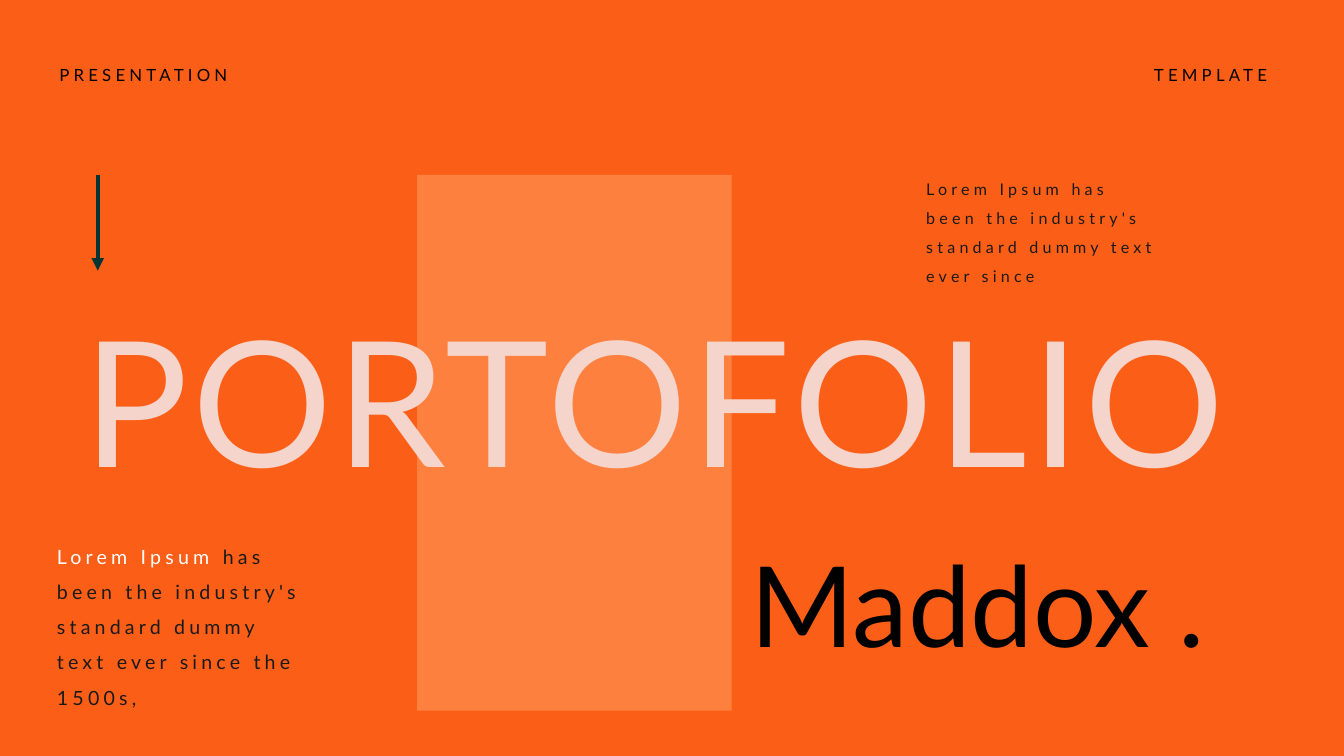
from lxml import etree
from pptx import Presentation
from pptx.dml.color import RGBColor
from pptx.enum.shapes import MSO_CONNECTOR, MSO_SHAPE
from pptx.enum.text import MSO_ANCHOR, MSO_AUTO_SIZE
from pptx.oxml.ns import qn
from pptx.util import Inches, Pt

ORANGE = RGBColor(0xFB, 0x5F, 0x17)
LIGHT_ORANGE = RGBColor(0xFE, 0x80, 0x3E)
BLUSH = RGBColor(0xF5, 0xD4, 0xCB)
TEAL = RGBColor(0x01, 0x34, 0x32)
BLACK = RGBColor(0, 0, 0)
INK = RGBColor(0x1A, 0x1A, 0x1A)
WHITE = RGBColor(0xFF, 0xFF, 0xFF)

FONT = "Lato"
STRAIGHT = MSO_CONNECTOR.STRAIGHT
RECTANGLE = MSO_SHAPE.RECTANGLE
TOP, MIDDLE = MSO_ANCHOR.TOP, MSO_ANCHOR.MIDDLE
GROW = MSO_AUTO_SIZE.SHAPE_TO_FIT_TEXT


def add_text(slide, box, text, *, size, color=BLACK, lead="", lead_color=WHITE,
             spacing=6, line_spacing=None, anchor=TOP, inset=0.1):
    """Add a text box, with an optional lead-in in its own colour."""
    tf = slide.shapes.add_textbox(*map(Inches, box)).text_frame
    tf.word_wrap = True
    tf.auto_size = GROW
    tf.vertical_anchor = anchor
    tf.margin_left = tf.margin_right = Inches(inset)
    p = tf.paragraphs[0]
    if line_spacing:
        p.line_spacing = line_spacing
    for part, part_color in ((lead, lead_color), (text, color)):
        if part:
            r = p.add_run()
            r.text = part
            r.font.name = FONT
            r.font.size = Pt(size)
            r.font.color.rgb = part_color
            if spacing:
                r.font._element.set("spc", str(spacing * 100))


def add_panel(slide, box):
    """Add the light panel behind the title."""
    sp = slide.shapes.add_shape(RECTANGLE, *map(Inches, box))
    sp.shadow.inherit = False
    sp.fill.solid()
    sp.fill.fore_color.rgb = LIGHT_ORANGE
    sp.line.fill.background()


def add_down_arrow(slide, left, top, length):
    """Add a vertical arrow that points down."""
    x = Inches(left)
    line = slide.shapes.add_connector(STRAIGHT, x, Inches(top), x, Inches(top + length))
    line.line.color.rgb = TEAL
    line.line.width = Pt(6)
    etree.SubElement(line.line._get_or_add_ln(), qn("a:tailEnd"), type="triangle")
    etree.SubElement(line._element.spPr, qn("a:effectLst"))


def add_header(slide, left, top, width):
    """Add the labels at both ends of the header."""
    label_width = 2.79
    add_text(slide, (left, top, 4.6, 0.5), "PRESENTATION", size=24)
    add_text(slide, (left + width - label_width, top, label_width, 0.5), "TEMPLATE", size=24)


def add_title(slide, left, top, width):
    """Add the large title with the name below its right end."""
    add_text(slide, (left + 13.24, top + 4.82, 10.9, 2.79), "Maddox .", size=160, spacing=0)
    add_text(slide, (left, top, width, 4.31), "PORTOFOLIO", size=250, color=BLUSH)


def add_blurb(slide, box, text, size, lead=""):
    """Add a widely spaced paragraph centred vertically in its box."""
    add_text(slide, box, text, size=size, color=INK, lead=lead,
             line_spacing=1.5, anchor=MIDDLE, inset=0.05)


def main():
    """Build and save the cover slide."""
    prs = Presentation()
    prs.slide_width, prs.slide_height = Inches(26.67), Inches(15)
    s = prs.slides.add_slide(prs.slide_layouts[6])
    s.background.fill.solid()
    s.background.fill.fore_color.rgb = ORANGE
    add_panel(s, (8.28, 3.47, 6.24, 10.63))
    add_header(s, 1.08, 1.23, 24.51)
    add_down_arrow(s, 1.94, 3.47, 1.9)
    add_blurb(s, (1.08, 10.55, 5.15, 3.54),
              "has been the industry's standard dummy text ever since the 1500s,",
              28, lead="Lorem Ipsum ")
    add_blurb(s, (18.33, 3.34, 4.7, 2.35),
              "Lorem Ipsum has been the industry's standard dummy text ever since", 23)
    add_title(s, 1.55, 5.75, 23.8)
    prs.save("out.pptx")


if __name__ == "__main__":
    main()
